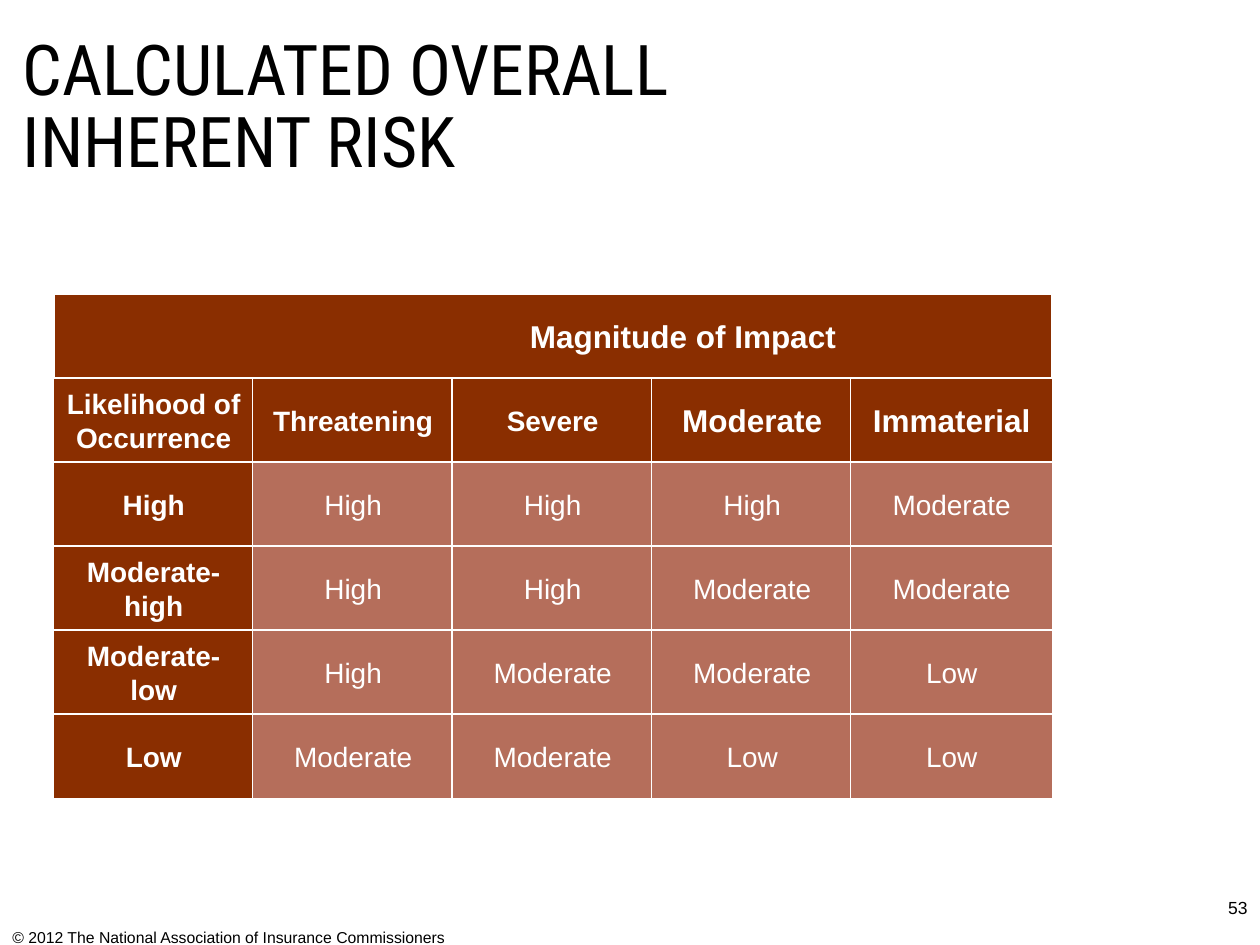
from dataclasses import dataclass

from pptx import Presentation
from pptx.dml.color import RGBColor
from pptx.enum.shapes import MSO_SHAPE as Shape
from pptx.enum.text import MSO_ANCHOR as Anchor, PP_ALIGN as Align
from pptx.util import Inches, Pt

BLACK = RGBColor(0x00, 0x00, 0x00)
WHITE = RGBColor(0xFF, 0xFF, 0xFF)
RUST = RGBColor(0x8A, 0x2E, 0x00)
ROSE = RGBColor(0xB5, 0x6E, 0x5B)

LEFT, TOP = 0.42, 3.0
COL_PITCH, ROW_PITCH = 19 / 12, 2 / 3
CELL_W, CELL_H = 1.6, 0.67


@dataclass
class Cell:
    text: str
    left: float
    top: float
    width: float = CELL_W
    fill: RGBColor = ROSE
    size: int = 16
    bold: bool = False
    inset: float = 0.1


ROWS = [
    ["Likelihood of\nOccurrence", "Threatening", "Severe", "Moderate", "Immaterial"],
    ["High", "High", "High", "High", "Moderate"],
    ["Moderate-\nhigh", "High", "High", "Moderate", "Moderate"],
    ["Moderate-\nlow", "High", "Moderate", "Moderate", "Low"],
    ["Low", "Moderate", "Moderate", "Low", "Low"],
]


def write(tf, text: str, *, size: int, font: str = "Arial", color: RGBColor = BLACK,
          bold: bool = False, align=Align.LEFT, spacing: float = 1.0) -> None:
    for i, line in enumerate(text.split("\n")):
        p = tf.add_paragraph() if i else tf.paragraphs[0]
        p.alignment = align
        p.line_spacing = spacing
        r = p.add_run()
        r.text = line
        r.font.name = font
        r.font.size = Pt(size)
        r.font.bold = bold
        r.font.color.rgb = color


def draw_cell(shapes, cell: Cell) -> None:
    sp = shapes.add_shape(Shape.RECTANGLE, Inches(cell.left), Inches(cell.top),
                          Inches(cell.width), Inches(CELL_H))
    sp.shadow.inherit = False
    sp.fill.solid()
    sp.fill.fore_color.rgb = cell.fill
    sp.line.color.rgb = WHITE
    sp.line.width = Pt(0.75)
    tf = sp.text_frame
    tf.word_wrap = False
    tf.vertical_anchor = Anchor.MIDDLE
    tf.margin_left = Inches(cell.inset)
    write(tf, cell.text, size=cell.size, color=WHITE, bold=cell.bold, align=Align.CENTER)


def draw_matrix(shapes) -> None:
    draw_cell(shapes, Cell("Magnitude of Impact", 0.43, TOP - ROW_PITCH, width=7.92,
                           fill=RUST, size=18, bold=True, inset=2.16))
    for row, texts in enumerate(ROWS):
        for col, text in enumerate(texts):
            heading = row == 0 or col == 0
            draw_cell(shapes, Cell(text, LEFT + col * COL_PITCH, TOP + row * ROW_PITCH,
                                   fill=RUST if heading else ROSE,
                                   size=18 if row == 0 and col >= 3 else 16,
                                   bold=heading))


def add_label(s, text: str, left: float, top: float, width: float, height: float,
              size: int, align=Align.LEFT) -> None:
    tb = s.shapes.add_textbox(Inches(left), Inches(top), Inches(width), Inches(height))
    tb.text_frame.word_wrap = True
    write(tb.text_frame, text, size=size, align=align)


def main() -> None:
    prs = Presentation()
    prs.slide_width, prs.slide_height = Inches(10), Inches(7.5)
    s = prs.slides.add_slide(prs.slide_layouts[5])

    title = s.shapes.title
    title.left, title.top = Inches(0.08), Inches(0.25)
    title.width, title.height = Inches(6.57), Inches(1.25)
    title.text_frame.word_wrap = True
    title.text_frame.vertical_anchor = Anchor.MIDDLE
    write(title.text_frame, "CALCULATED OVERALL INHERENT RISK", size=40,
          font="Roboto Condensed", spacing=0.85)

    draw_matrix(s.shapes.add_group_shape().shapes)
    add_label(s, "© 2012 The National Association of Insurance Commissioners",
              0, 7.31, 5.58, 0.25, 9)
    add_label(s, "53", 7.67, 7.07, 2.33, 0.27, 10, Align.RIGHT)
    prs.save("out.pptx")


if __name__ == "__main__":
    main()
